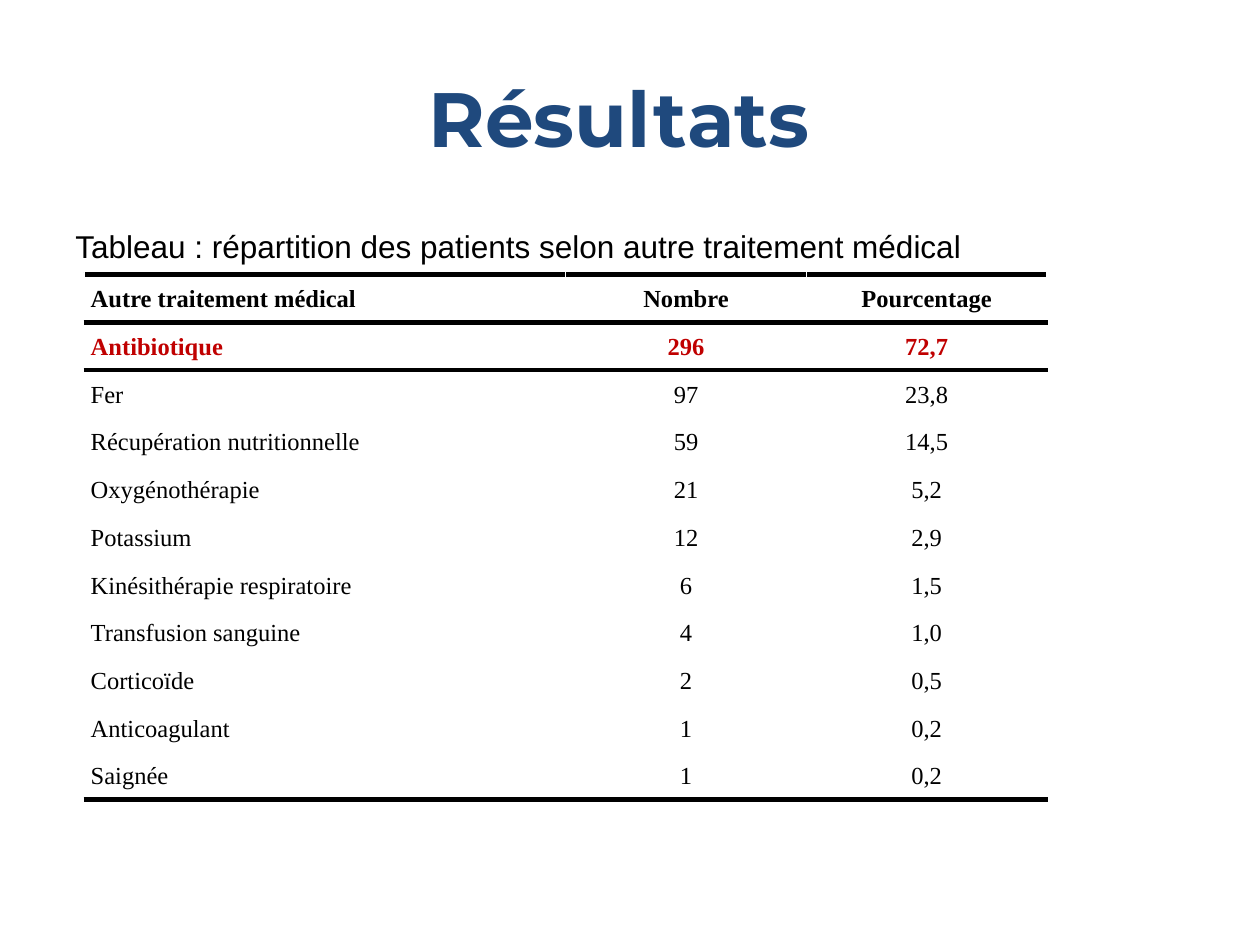
from pptx import Presentation, util as u
from pptx.dml import color
from pptx.enum import text
from pptx.oxml import ns, parse_xml

INK = {"title": "1F497D", "text": "000000", "key": "C00000"}
LEFT, MID = text.PP_ALIGN.LEFT, text.PP_ALIGN.CENTER
ROWS = [
    ("Autre traitement médical", "Nombre", "Pourcentage"),
    ("Antibiotique", "296", "72,7"),
    ("Fer", "97", "23,8"),
    ("Récupération nutritionnelle", "59", "14,5"),
    ("Oxygénothérapie", "21", "5,2"),
    ("Potassium", "12", "2,9"),
    ("Kinésithérapie respiratoire", "6", "1,5"),
    ("Transfusion sanguine", "4", "1,0"),
    ("Corticoïde", "2", "0,5"),
    ("Anticoagulant", "1", "0,2"),
    ("Saignée", "1", "0,2"),
]


class Deck:
    """Style and current slide, on a grid of 200 columns by 150 rows."""
    size = u.Inches(10), u.Inches(7.5)
    unit = u.Inches(0.05)
    fonts = {
        "title": {"name": "Montserrat", "size": u.Pt(44), "bold": True},
        "label": {"name": "Arial", "size": u.Pt(18), "bold": False},
        "cell": {"name": "Times New Roman", "size": u.Pt(14), "bold": False},
    }

    def __init__(self):
        self.prs = Presentation()
        self.prs.slide_width, self.prs.slide_height = self.size
        self.slide = self.prs.slides.add_slide(self.prs.slide_layouts[6])

    def grid(self, *cells):
        return [round(n * self.unit) for n in cells]

    def fill(self, frame, words, font, ink, para, **more):
        """Put one styled line of text in a frame."""
        line = frame.paragraphs[0]
        for key, val in para.items():
            setattr(line, key, val)
        run = line.add_run()
        run.text = words
        for key, val in {**self.fonts[font], **more}.items():
            setattr(run.font, key, val)
        run.font.color.rgb = color.RGBColor.from_string(INK[ink])

    def label(self, area, words, font, ink, anchor, **para):
        frame = self.slide.shapes.add_textbox(*self.grid(*area)).text_frame
        frame.word_wrap = True
        frame.vertical_anchor = anchor
        self.fill(frame, words, font, ink, para)

    def rule(self, cell, side):
        """Draw a 3 pt border on side T or B of a cell."""
        cell._tc.get_or_add_tcPr().append(parse_xml(
            f'<a:ln{side} {ns.nsdecls("a")} w="{u.Pt(3)}"><a:solidFill>'
            f'<a:srgbClr val="{INK["text"]}"/></a:solidFill></a:ln{side}>'))

    def table(self, area, shares, rows):
        area = self.grid(*area)
        table = self.slide.shapes.add_table(
            len(rows), len(shares), *area).table
        table.first_row = table.horz_banding = False
        for col, share in zip(table.columns, shares):
            col.width = round(area[2] * share)
        pad = dict.fromkeys(("margin_left", "margin_right", "margin_top",
                             "margin_bottom"), self.unit)
        form = {**pad, "vertical_anchor": text.MSO_ANCHOR.MIDDLE}
        last = len(rows) - 1
        for r, row in enumerate(rows):
            for c, words in enumerate(row):
                cell = table.cell(r, c)
                for key, val in form.items():
                    setattr(cell, key, val)
                if r < 2:
                    self.rule(cell, "T")
                if r in (0, last):
                    self.rule(cell, "B")
                cell.fill.background()
                para = {"alignment": MID if c else LEFT, "line_spacing": 1.07}
                self.fill(cell.text_frame, words, "cell",
                          "key" if r == 1 else "text", para, bold=r < 2)


def main():
    deck = Deck()
    deck.label((10, 6, 180, 25), "Résultats ", "title", "title",
               text.MSO_ANCHOR.MIDDLE, alignment=MID)
    deck.label((10, 35, 180, 99),
               "Tableau : répartition des patients selon autre traitement médical",
               "label", "text", text.MSO_ANCHOR.TOP, space_before=u.Pt(3.6))
    deck.table((13.4, 43.6, 152.8, 83.4), (0.5, 0.25, 0.25), ROWS)
    deck.prs.save("out.pptx")


if __name__ == "__main__":
    main()
